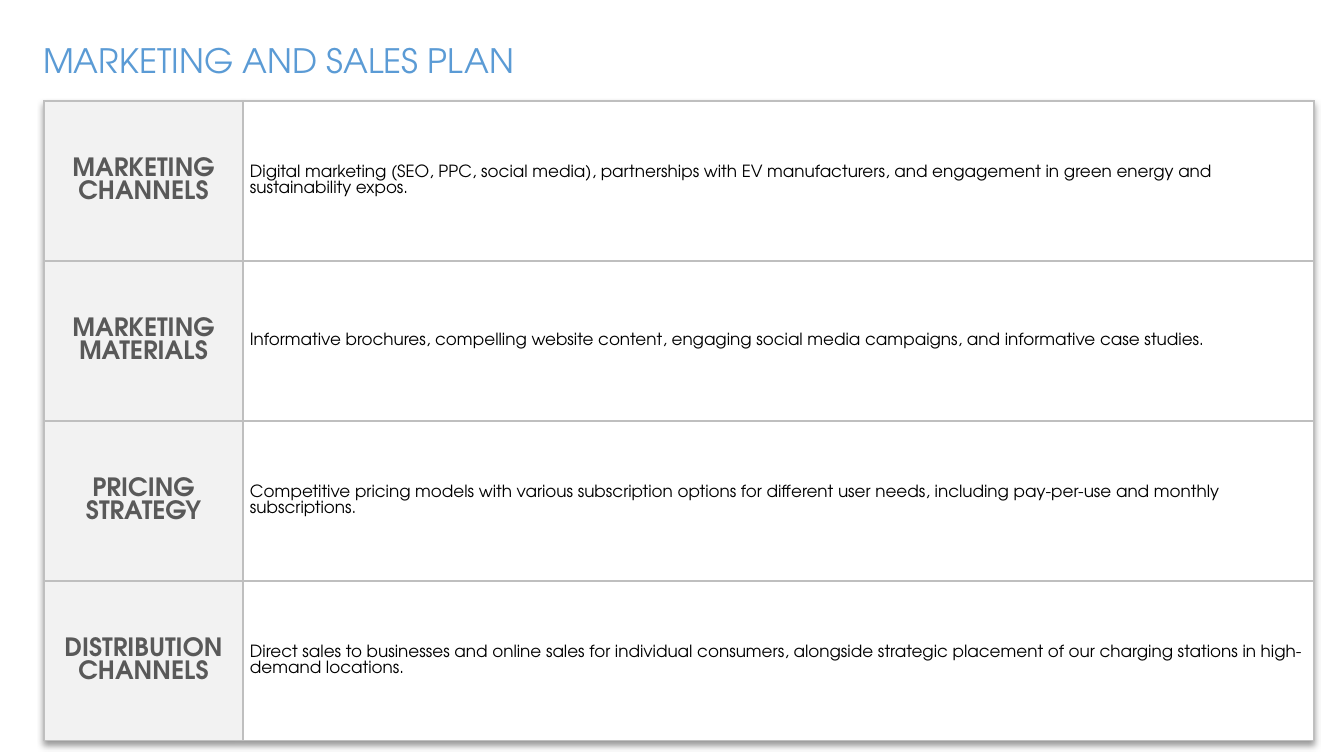
from pptx import Presentation
from pptx import util as u
from pptx.dml.color import RGBColor
from pptx.enum import text
from pptx.oxml import parse_xml
from pptx.oxml.ns import nsdecls

BLUE = RGBColor(0x5B, 0x9B, 0xD5)
GREY_TEXT = RGBColor(0x59, 0x59, 0x59)
GREY_FILL = RGBColor(0xF2, 0xF2, 0xF2)
GREY_LINE = RGBColor(0xBF, 0xBF, 0xBF)
BLACK = RGBColor(0, 0, 0)
WHITE = RGBColor(0xFF, 0xFF, 0xFF)

PLAN = [
    ("MARKETING CHANNELS",
     "Digital marketing (SEO, PPC, social media), partnerships with EV manufacturers, "
     "and engagement in green energy and sustainability expos."),
    ("MARKETING MATERIALS",
     "Informative brochures, compelling website content, engaging social media campaigns, "
     "and informative case studies."),
    ("PRICING STRATEGY",
     "Competitive pricing models with various subscription options for different user needs, "
     "including pay-per-use and monthly subscriptions."),
    ("DISTRIBUTION CHANNELS",
     "Direct sales to businesses and online sales for individual consumers, alongside "
     "strategic placement of our charging stations in high-demand locations."),
]


def px(count):
    return u.Emu(round(count * 914400 / 100.8))


class PlanSlide:
    font_name = "TeX Gyre Adventor"

    def __init__(self, deck):
        self.page = deck.slides.add_slide(deck.slide_layouts[5])

    def set_text(self, frame, words, size, color, align=text.PP_ALIGN.LEFT, bold=False):
        para = frame.paragraphs[0]
        para.text = words
        para.alignment = align
        font = para.font
        font.name, font.size, font.bold = self.font_name, u.Pt(size), bold
        font.color.rgb = color

    def title(self, words, left, top, width, height):
        box = self.page.shapes.title
        box.left, box.top, box.width, box.height = map(px, (left, top, width, height))
        frame = box.text_frame
        frame.word_wrap = True
        frame.auto_size = text.MSO_AUTO_SIZE.SHAPE_TO_FIT_TEXT
        frame.vertical_anchor = text.MSO_ANCHOR.TOP
        self.set_text(frame, words, 24, BLUE)

    def borders(self, cell):
        properties = cell._tc.get_or_add_tcPr()
        for index, side in enumerate("LRTB"):
            properties.insert(index, parse_xml(
                f'<a:ln{side} {nsdecls("a")} w="{u.Pt(1)}"><a:solidFill>'
                f'<a:srgbClr val="{GREY_LINE}"/></a:solidFill></a:ln{side}>'))

    def shadow(self, table):
        table._tbl.tblPr.insert(0, parse_xml(
            f'<a:effectLst {nsdecls("a")}><a:outerShdw blurRad="50800" dist="38100" '
            'dir="5400000" algn="t" rotWithShape="0"><a:srgbClr val="000000">'
            '<a:alpha val="40000"/></a:srgbClr></a:outerShdw></a:effectLst>'))

    def fill(self, cell, color):
        cell.fill.solid()
        cell.fill.fore_color.rgb = color
        cell.vertical_anchor = text.MSO_ANCHOR.MIDDLE
        self.borders(cell)

    def table(self, rows, left, top, widths, row_height):
        table = self.page.shapes.add_table(
            len(rows), len(widths), px(left), px(top),
            px(sum(widths)), px(row_height * len(rows))).table
        table.first_row = table.horz_banding = False
        self.shadow(table)
        for column, width in zip(table.columns, widths):
            column.width = px(width)
        for row, (heading, details) in zip(table.rows, rows):
            row.height = px(row_height)
            label, body = row.cells
            # Heading cell
            self.fill(label, GREY_FILL)
            self.set_text(label.text_frame, heading, 18, GREY_TEXT,
                          text.PP_ALIGN.CENTER, bold=True)
            # Description cell
            self.fill(body, WHITE)
            body.margin_left = body.margin_right = px(7)
            body.margin_top = body.margin_bottom = 0
            self.set_text(body.text_frame, details, 12, BLACK)


def main():
    deck = Presentation()
    deck.slide_width, deck.slide_height = px(1344), px(756)
    slide = PlanSlide(deck)
    # Title
    slide.title("MARKETING AND SALES PLAN", 33, 35, 814, 50)
    # Plan table
    slide.table(PLAN, left=44, top=101, widths=(199, 1071), row_height=160)
    deck.save("out.pptx")


if __name__ == "__main__":
    main()
